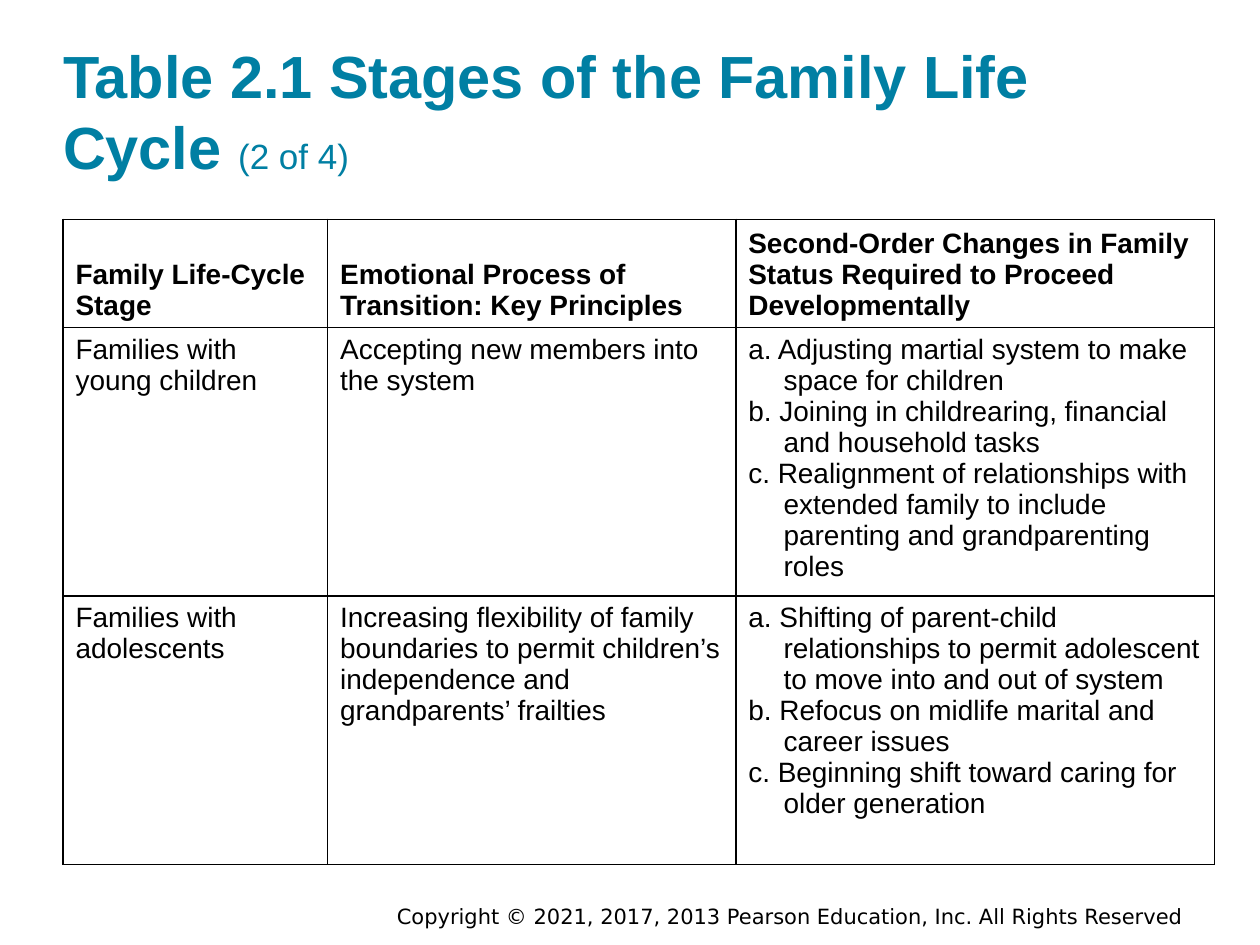
from dataclasses import dataclass

import pptx
import pptx.dml.color
import pptx.enum.text
import pptx.oxml.ns
import pptx.slide
import pptx.table
import pptx.text.text
import pptx.util
from lxml import etree
from pptx.util import Inches

BLACK = pptx.dml.color.RGBColor(0x00, 0x00, 0x00)
TEAL = pptx.dml.color.RGBColor(0x00, 0x7F, 0xA3)
BODY_FONT = "Arial"
FOOTER_FONT = "DejaVu Sans"
COLUMN_WIDTHS = (2.1, 3.24, 3.8)
HEADER_HEIGHT = 0.86
STAGE_HEIGHT = 2.13
HANGING_INDENT = 0.28
CELL_LINE_PITCH = 17.75


@dataclass(frozen=True)
class Stage:
    name: str
    principle: str
    changes: tuple[str, ...]


HEADINGS = (
    "Family Life-Cycle Stage",
    "Emotional Process of Transition: Key Principles",
    "Second-Order Changes in Family Status Required to Proceed Developmentally",
)
STAGES = (
    Stage(
        "Families with young children",
        "Accepting new members into the system",
        (
            "a. Adjusting martial system to make space for children",
            "b. Joining in childrearing, financial and household tasks",
            "c. Realignment of relationships with extended family to include "
            "parenting and grandparenting roles",
        ),
    ),
    Stage(
        "Families with adolescents",
        "Increasing flexibility of family boundaries to permit children’s "
        "independence and grandparents’ frailties",
        (
            "a. Shifting of parent-child relationships to permit adolescent "
            "to move into and out of system",
            "b. Refocus on midlife marital and career issues",
            "c. Beginning shift toward caring for older generation",
        ),
    ),
)


def format_run(run: pptx.text.text._Run, size: float, color: pptx.dml.color.RGBColor,
               bold: bool = False, font_name: str = BODY_FONT) -> None:
    run.font.name = font_name
    run.font.size = pptx.util.Pt(size)
    run.font.bold = bold
    run.font.color.rgb = color


def add_borders(cell: pptx.table._Cell) -> None:
    properties = cell._tc.get_or_add_tcPr()
    qualify = pptx.oxml.ns.qn
    for side in ("L", "R", "T", "B"):
        line = etree.SubElement(properties, qualify(f"a:ln{side}"), w=str(pptx.util.Pt(1)))
        fill = etree.SubElement(line, qualify("a:solidFill"))
        etree.SubElement(fill, qualify("a:srgbClr"), val=str(BLACK))


def fill_cell(cell: pptx.table._Cell, lines: tuple[str, ...],
              heading: bool = False, hanging: bool = False) -> None:
    add_borders(cell)
    cell.fill.background()
    anchors = pptx.enum.text.MSO_ANCHOR
    cell.vertical_anchor = anchors.BOTTOM if heading else anchors.TOP
    cell.text_frame.text = "\n".join(lines)
    for paragraph in cell.text_frame.paragraphs:
        paragraph.line_spacing = pptx.util.Pt(CELL_LINE_PITCH)
        if hanging:
            properties = paragraph._p.get_or_add_pPr()
            properties.set("marL", str(Inches(HANGING_INDENT)))
            properties.set("indent", str(-Inches(HANGING_INDENT)))
        for run in paragraph.runs:
            format_run(run, 16, BLACK, bold=heading)


def add_title(slide: pptx.slide.Slide) -> None:
    title = slide.shapes.title
    title.left, title.top = Inches(0.5), Inches(0.24)
    title.width, title.height = Inches(9), Inches(1.2)
    frame = title.text_frame
    frame.margin_left = frame.margin_right = frame.margin_top = frame.margin_bottom = 0
    frame.auto_size = pptx.enum.text.MSO_AUTO_SIZE.NONE
    frame.vertical_anchor = pptx.enum.text.MSO_ANCHOR.BOTTOM
    frame.text = "Table 2.1 Stages of the Family Life Cycle "
    paragraph = frame.paragraphs[0]
    paragraph.alignment = pptx.enum.text.PP_ALIGN.LEFT
    format_run(paragraph.runs[0], 34, TEAL, bold=True)
    part_number = paragraph.add_run()
    part_number.text = "(2 of 4)"
    format_run(part_number, 20, TEAL)


def add_stage_table(slide: pptx.slide.Slide) -> None:
    height = HEADER_HEIGHT + STAGE_HEIGHT * len(STAGES)
    table = slide.shapes.add_table(
        len(STAGES) + 1, len(HEADINGS), Inches(0.5), Inches(1.74),
        Inches(sum(COLUMN_WIDTHS)), Inches(height),
    ).table
    table.first_row = False
    table.horz_banding = False
    for column, width in zip(table.columns, COLUMN_WIDTHS):
        column.width = Inches(width)
    table.rows[0].height = Inches(HEADER_HEIGHT)
    for index, heading in enumerate(HEADINGS):
        fill_cell(table.cell(0, index), (heading,), heading=True)
    for index, stage in enumerate(STAGES, start=1):
        table.rows[index].height = Inches(STAGE_HEIGHT)
        fill_cell(table.cell(index, 0), (stage.name,))
        fill_cell(table.cell(index, 1), (stage.principle,))
        fill_cell(table.cell(index, 2), stage.changes, hanging=True)


def add_copyright(slide: pptx.slide.Slide) -> None:
    box = slide.shapes.add_textbox(Inches(2.93), Inches(7.04), Inches(6.56), Inches(0.46))
    frame = box.text_frame
    frame.word_wrap = True
    frame.vertical_anchor = pptx.enum.text.MSO_ANCHOR.MIDDLE
    frame.text = "Copyright © 2021, 2017, 2013 Pearson Education, Inc. All Rights Reserved"
    paragraph = frame.paragraphs[0]
    paragraph.alignment = pptx.enum.text.PP_ALIGN.RIGHT
    format_run(paragraph.runs[0], 12, BLACK, font_name=FOOTER_FONT)


def main() -> None:
    presentation = pptx.Presentation()
    presentation.slide_width = Inches(10)
    presentation.slide_height = Inches(7.5)
    slide = presentation.slides.add_slide(presentation.slide_layouts.get_by_name("Title Only"))
    add_copyright(slide)
    add_title(slide)
    add_stage_table(slide)
    presentation.save("out.pptx")


if __name__ == "__main__":
    main()
